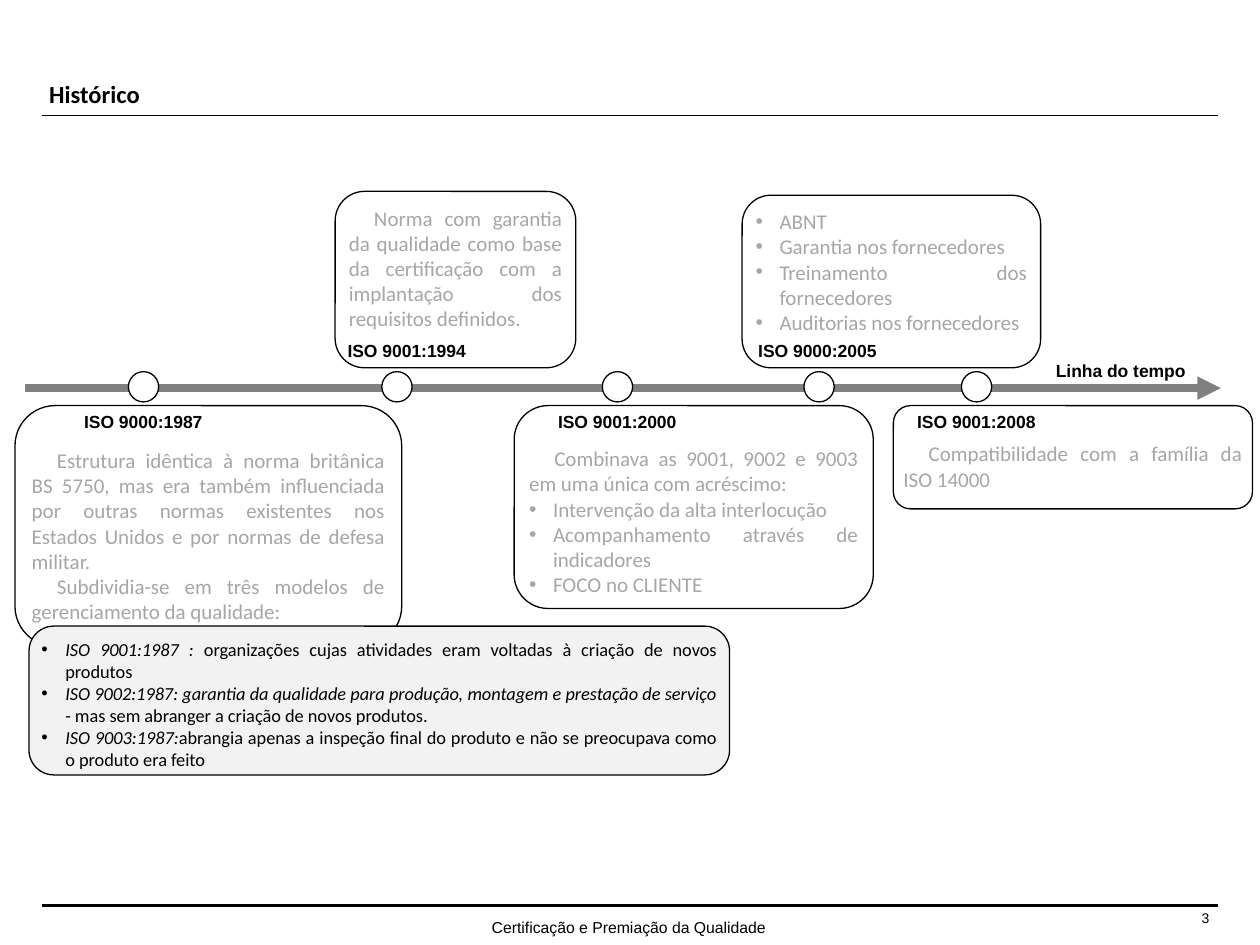
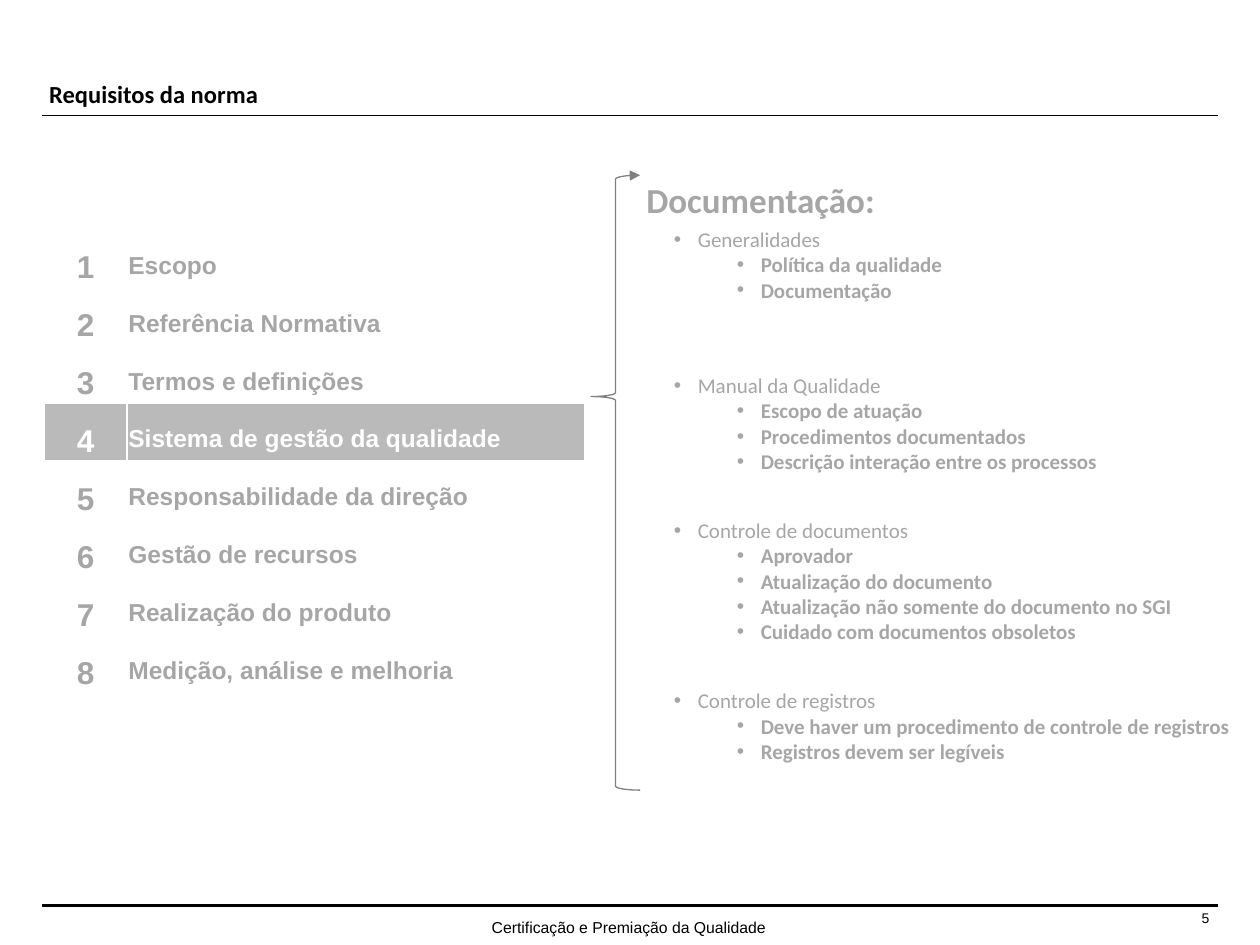
from dataclasses import dataclass

from pptx import Presentation
from pptx.dml.color import RGBColor
from pptx.enum.dml import MSO_LINE
from pptx.enum.shapes import MSO_CONNECTOR, MSO_SHAPE
from pptx.enum.text import MSO_ANCHOR, PP_ALIGN
from pptx.oxml.ns import qn
from pptx.util import Pt
from lxml import etree

LEFT, CENTER, RIGHT, JUSTIFY = (PP_ALIGN.LEFT, PP_ALIGN.CENTER,
                                PP_ALIGN.RIGHT, PP_ALIGN.JUSTIFY)
TOP, MIDDLE = MSO_ANCHOR.TOP, MSO_ANCHOR.MIDDLE
ROUNDED, OVAL, BRACE = (MSO_SHAPE.ROUNDED_RECTANGLE, MSO_SHAPE.OVAL,
                        MSO_SHAPE.LEFT_BRACE)
STRAIGHT, SOLID = MSO_CONNECTOR.STRAIGHT, MSO_LINE.SOLID

BLACK, WHITE, GREY, LIGHT = "000000", "FFFFFF", "A6A6A6", "F2F2F2"
LINE_GREY, HIGHLIGHT = "808080", "BABABA"
BODY, LABEL = "Calibri", "Arial"
INSETS = (7.2, 3.6, 7.2, 3.6)
TIGHT = (2.9, 2.9, 2.9, 2.9)
BELOW_LABEL = (2.9, 17.3, 2.9, 2.9)
HANG = 13.7


@dataclass
class Para:
    """One paragraph; runs is a string or a list of (text, italic) pairs."""
    runs: object
    left: float = 0
    first: float = 0
    bullet: bool = False
    bold: bool = False


def bullet(runs):
    return Para(runs, HANG, -HANG, True)


def sub_bullet(text):
    return Para(text, HANG + 36, -HANG, True, True)


def indented(text):
    return Para(text, 0, 14.4)


def rgb(value):
    return RGBColor.from_string(value)


def add_arrowhead(sp):
    etree.SubElement(sp.line._get_or_add_ln(), qn("a:tailEnd"), type="triangle")


def write(tf, paras, size=12, font=BODY, color=GREY, bold=False, align=LEFT,
          spacing=None, insets=INSETS, wrap=True, anchor=TOP):
    tf.word_wrap, tf.vertical_anchor = wrap, anchor
    tf.margin_left, tf.margin_top, tf.margin_right, tf.margin_bottom = map(Pt, insets)
    if isinstance(paras, str):
        paras = [Para(paras)]
    for i, para in enumerate(paras):
        p = tf.add_paragraph() if i else tf.paragraphs[0]
        p.alignment = align
        if spacing:
            p.line_spacing = spacing
        pPr = p._p.get_or_add_pPr()
        pPr.set("marL", str(Pt(para.left)))
        pPr.set("indent", str(Pt(para.first)))
        if para.bullet:
            etree.SubElement(pPr, qn("a:buFont"), typeface="Arial")
            etree.SubElement(pPr, qn("a:buChar"), char="•")
        runs = [(para.runs, False)] if isinstance(para.runs, str) else para.runs
        for text, italic in runs:
            r = p.add_run()
            r.text = text
            r.font.name, r.font.size = font, Pt(size)
            r.font.bold, r.font.italic = bold or para.bold, italic
            r.font.color.rgb = rgb(color)


def add_text(slide, box, paras, **fmt):
    sp = slide.shapes.add_textbox(*map(Pt, box))
    write(sp.text_frame, paras, **fmt)


def add_label(slide, x, y, width, text):
    add_text(slide, (x, y, width, 19.4), text, size=10, font=LABEL,
             color=BLACK, bold=True, wrap=False)


def add_shape(slide, kind, box, fill=WHITE, line=BLACK):
    sp = slide.shapes.add_shape(kind, *map(Pt, box))
    sp.shadow.inherit = False
    sp.fill.solid()
    sp.fill.fore_color.rgb = rgb(fill)
    sp.line.color.rgb = rgb(line)
    sp.line.width = Pt(0.75)
    return sp


def add_card(slide, box, paras, fill=WHITE, **fmt):
    sp = add_shape(slide, ROUNDED, box, fill)
    write(sp.text_frame, paras, align=JUSTIFY, **{"insets": TIGHT, **fmt})


def add_rule(slide, x1, x2, y, width, color=BLACK):
    """Horizontal line."""
    sp = slide.shapes.add_connector(STRAIGHT, Pt(x1), Pt(y), Pt(x2), Pt(y))
    sp.line.color.rgb = rgb(color)
    sp.line.width = Pt(width)
    sp.line.dash_style = SOLID
    etree.SubElement(sp._element.spPr, qn("a:effectLst"))
    return sp


def add_page(prs, title, number):
    """Blank slide with the shared title, rules and footer."""
    slide = prs.slides.add_slide(prs.slide_layouts[6])
    add_rule(slide, 23.8, 696.2, 65.6, 0.25)
    add_rule(slide, 23.8, 696.2, 517.6, 1.5)
    add_text(slide, (660.2, 517, 33.8, 15.1), str(number), size=8, font=LABEL,
             color=BLACK, align=RIGHT, insets=TIGHT)
    add_text(slide, (272.9, 524.2, 172.8, 10.8),
             "Certificação e Premiação da Qualidade", size=9, font=LABEL,
             color=BLACK, align=CENTER, insets=(7.2, 0, 7.2, 0), wrap=False)
    add_text(slide, (25.2, 43.9, 668.9, 44.6), title, size=14, color=BLACK,
             bold=True, spacing=0.9, insets=TIGHT)
    return slide


def add_chapter_table(slide, chapters, current):
    row_height, widths = 33.12, (47.5, 261.4)
    frame = slide.shapes.add_table(len(chapters), 2, Pt(25.2), Pt(131),
                                   Pt(sum(widths)), Pt(row_height * len(chapters)))
    table = frame.table
    table.first_row = table.horz_banding = False
    for column, width in zip(table.columns, widths):
        column.width = Pt(width)
    for i, chapter in enumerate(chapters):
        table.rows[i].height = Pt(row_height)
        number = i + 1
        fill, color = (HIGHLIGHT, WHITE) if number == current else (WHITE, GREY)
        for j, (text, size, align) in enumerate(
                [(str(number), 18, CENTER), (chapter, 14, LEFT)]):
            cell = table.cell(i, j)
            cell.fill.solid()
            cell.fill.fore_color.rgb = rgb(fill)
            write(cell.text_frame, text, size=size, font=LABEL, color=color,
                  bold=True, align=align, spacing=1.5)
            cell.vertical_anchor = MIDDLE
            cell.margin_left = cell.margin_top = cell.margin_right = Pt(0.7)
            cell.margin_bottom = Pt(0)


def build_history(prs):
    slide = add_page(prs, "Histórico", 3)
    below = 231.8
    add_card(slide, (424.1, 111.6, 170.6, 98.6), [
        bullet("ABNT"),
        bullet("Garantia nos fornecedores"),
        bullet("Treinamento dos fornecedores"),
        bullet("Auditorias nos fornecedores")])
    add_card(slide, (191.5, 109.4, 137.5, 100.8), [
        indented("Norma com garantia da qualidade como base da certificação "
                 "com a implantação dos requisitos definidos.")])
    add_card(slide, (510.5, below, 205.2, 59), [
        indented("Compatibilidade com a família da ISO 14000")],
        insets=BELOW_LABEL)
    add_card(slide, (293.8, below, 205.2, 115.9), [
        indented("Combinava as 9001, 9002 e 9003 em uma única com acréscimo:"),
        bullet("Intervenção da alta interlocução"),
        bullet("Acompanhamento através de indicadores"),
        bullet("FOCO no CLIENTE")], insets=BELOW_LABEL)
    add_card(slide, (8.6, below, 221, 137.5), [
        indented("Estrutura idêntica à norma britânica BS 5750, mas era também "
                 "influenciada por outras normas existentes nos Estados Unidos "
                 "e por normas de defesa militar."),
        indented("Subdividia-se em três modelos de gerenciamento "
                 "da qualidade:")], insets=BELOW_LABEL)

    add_arrowhead(add_rule(slide, 14.4, 697.7, 221.8, 4.5, LINE_GREY))
    label_above, label_below = 190.8, 231.1
    milestones = [("ISO 9000:1987", 41, label_below, 73.4),
                  ("ISO 9001:1994", 191.5, label_above, 218.2),
                  ("ISO 9001:2000", 311.8, label_below, 344.2),
                  ("ISO 9000:2005", 426.2, label_above, 459.4),
                  ("ISO 9001:2008", 517, label_below, 549.4)]
    for name, x, y, marker_x in milestones:
        add_label(slide, x, y, 82.8, name)
        add_shape(slide, OVAL, (marker_x, 212.4, 17.3, 17.3))
    add_label(slide, 596.2, 202.3, 90, "Linha do tempo")

    add_card(slide, (16.6, 357.8, 400.3, 85), [
        bullet([("ISO 9001:1987 : ", True),
                ("organizações cujas atividades eram voltadas à criação de "
                 "novos produtos", False)]),
        bullet([("ISO 9002:1987: garantia da qualidade para produção, montagem "
                 "e prestação de serviço", True),
                (" - mas sem abranger a criação de novos produtos.", False)]),
        bullet([("ISO 9003:1987:", True),
                ("abrangia apenas a inspeção final do produto e não se "
                 "preocupava como o produto era feito", False)])],
        fill=LIGHT, size=10.5, color=BLACK)


def build_requirements(prs):
    slide = add_page(prs, "Requisitos da norma", 5)
    add_chapter_table(slide, [
        "Escopo", "Referência Normativa", "Termos e definições",
        "Sistema de gestão da qualidade", "Responsabilidade da direção",
        "Gestão de recursos", "Realização do produto",
        "Medição, análise e melhoria"], current=4)

    add_text(slide, (362.2, 98.6, 176.4, 31.7), "Documentação:", size=20, bold=True)
    topics = [
        (126, "Generalidades", ["Política da qualidade", "Documentação"]),
        (209.5, "Manual da Qualidade", [
            "Escopo de atuação", "Procedimentos documentados",
            "Descrição interação entre os processos"]),
        (292.3, "Controle de documentos", [
            "Aprovador", "Atualização do documento",
            "Atualização não somente do documento no SGI",
            "Cuidado com documentos obsoletos"]),
        (389.5, "Controle de registros", [
            "Deve haver um procedimento de controle de registros",
            "Registros devem ser legíveis"])]
    for y, topic, items in topics:
        height = 7.2 + 14.6 * (len(items) + 1)
        add_text(slide, (378, y, 340, height),
                 [bullet(topic)] + [sub_bullet(item) for item in items],
                 align=JUSTIFY)

    brace = add_shape(slide, BRACE, (337.7, 100.1, 28.1, 351.4), line=LINE_GREY)
    brace.adjustments[0], brace.adjustments[1] = 0.08, 0.36
    add_arrowhead(brace)


def main():
    prs = Presentation()
    prs.slide_width, prs.slide_height = Pt(720), Pt(540)
    build_history(prs)
    build_requirements(prs)
    prs.save("out.pptx")


if __name__ == "__main__":
    main()
